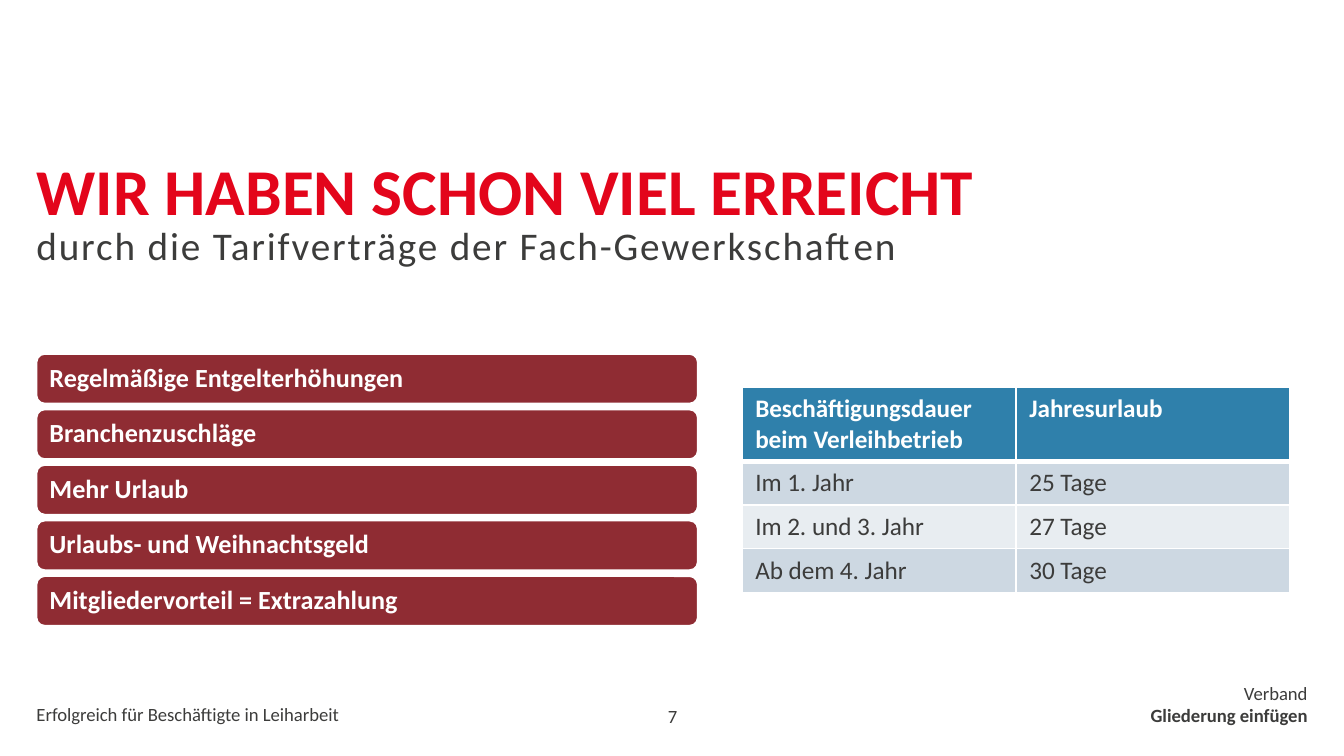
from lxml import etree
from pptx import Presentation
from pptx import util as u
from pptx.dml import color
from pptx.enum import shapes, text
from pptx.oxml import ns

DARK, RED, WINE, WHITE = "3C3C3B", "E3051B", "8F2C33", "FFFFFF"
BLUE, BAND, PALE = "2F80AB", "CDD8E2", "E8EDF1"
LEFT = 0.69
ACHIEVEMENTS = [
    "Regelmäßige Entgelterhöhungen",
    "Branchenzuschläge",
    "Mehr Urlaub",
    "Urlaubs- und Weihnachtsgeld",
    "Mitgliedervorteil = Extrazahlung",
]
HOLIDAYS = [
    ("Beschäftigungsdauer beim Verleihbetrieb", "Jahresurlaub"),
    ("Im 1. Jahr", "25 Tage"),
    ("Im 2. und 3. Jahr", "27 Tage"),
    ("Ab dem 4. Jahr", "30 Tage"),
]


def rgb(value):
    """Turn a hex string into a colour."""
    return color.RGBColor.from_string(value)


def apply(target, values):
    """Set every attribute named in a dict of format values."""
    for name, value in values.items():
        setattr(target, name, value)


def write(paragraph, words, size, hue=DARK, bold=False, tracking=None, **layout):
    """Put one formatted run into a paragraph."""
    apply(paragraph, layout)
    run = paragraph.add_run()
    run.text = words
    apply(run.font, {"name": "Calibri", "size": u.Pt(size), "bold": bold})
    run.font.color.rgb = rgb(hue)
    if tracking:
        run.font._element.set("spc", str(tracking * 100))


def set_frame(frame, inset=0, anchor=text.MSO_ANCHOR.TOP):
    """Set wrapping, anchor and equal insets of a text frame."""
    sides = ("left", "top", "right", "bottom")
    margins = {f"margin_{side}": u.Cm(inset) for side in sides}
    apply(frame, {"word_wrap": True, "vertical_anchor": anchor, **margins})
    return frame


def add_text(slide, box, anchor=text.MSO_ANCHOR.TOP):
    """Add an empty text box and return its frame."""
    return set_frame(slide.shapes.add_textbox(*map(u.Cm, box)).text_frame, 0, anchor)


def add_bar(slide, top, words):
    """Add one rounded achievement bar."""
    bar = slide.shapes.add_shape(
        shapes.MSO_SHAPE.ROUNDED_RECTANGLE, *map(u.Cm, (LEFT, top, 12.5, 0.94))
    )
    bar.shadow.inherit = False
    bar.fill.solid()
    bar.fill.fore_color.rgb = rgb(WINE)
    bar.line.color.rgb = rgb(WHITE)
    bar.line.width = u.Pt(1)
    frame = set_frame(bar.text_frame, 0.2, text.MSO_ANCHOR.MIDDLE)
    write(frame.paragraphs[0], words, 14, WHITE, True,
          alignment=text.PP_ALIGN.LEFT, line_spacing=0.9)


def add_borders(cell, top, bottom):
    """Draw white borders of the given widths around a cell."""
    properties = cell._tc.get_or_add_tcPr()
    widths = {"lnL": 1, "lnR": 1, "lnT": top, "lnB": bottom}
    for place, (tag, width) in enumerate(widths.items()):
        border = etree.Element(ns.qn(f"a:{tag}"), w=str(u.Pt(width)))
        fill = etree.SubElement(border, ns.qn("a:solidFill"))
        etree.SubElement(fill, ns.qn("a:srgbClr"), val=WHITE)
        properties.insert(place, border)


def add_holiday_table(slide):
    """Add the table of yearly holidays by length of employment."""
    box = map(u.Cm, (14.02, 7.32, 10.36, 3.86))
    table = slide.shapes.add_table(len(HOLIDAYS), 2, *box).table
    for row, entries in enumerate(HOLIDAYS):
        header = row == 0
        table.rows[row].height = u.Cm(1.4 if header else 0.82)
        for column, words in enumerate(entries):
            cell = table.cell(row, column)
            cell.fill.solid()
            cell.fill.fore_color.rgb = rgb(BLUE if header else BAND if row % 2 else PALE)
            add_borders(cell, 3 if row == 1 else 1, 3 if header else 1)
            write(cell.text_frame.paragraphs[0], words, 13.5,
                  WHITE if header else DARK, header)


def add_footer(slide):
    """Add the topic, the page number and the sender."""
    bottom = text.MSO_ANCHOR.BOTTOM
    topic = add_text(slide, (LEFT, 13.28, 9.88, 0.43), bottom)
    write(topic.paragraphs[0], "Erfolgreich für Beschäftigte in Leiharbeit", 10)
    number = add_text(slide, (11.48, 13, 2.46, 0.76), bottom)
    write(number.paragraphs[0], "7", 10, alignment=text.PP_ALIGN.CENTER, line_spacing=0.9)
    sender = add_text(slide, (17, 12.88, 7.71, 0.86))
    right = text.PP_ALIGN.RIGHT
    write(sender.paragraphs[0], "Verband", 10, alignment=right)
    write(sender.add_paragraph(), "Gliederung einfügen", 10, bold=True, alignment=right)


def main():
    """Build the slide and save it."""
    deck = Presentation()
    apply(deck, {"slide_width": u.Cm(25.4), "slide_height": u.Cm(14.29)})
    slide = deck.slides.add_slide(deck.slide_layouts[6])
    title = add_text(slide, (LEFT, 3, 24, 1.27))
    write(title.paragraphs[0], "WIR HABEN SCHON VIEL ERREICHT", 35, RED, True,
          line_spacing=0.9)
    subtitle = add_text(slide, (LEFT, 4.29, 24, 1.37))
    write(subtitle.paragraphs[0], "durch die Tarifverträge der Fach-Gewerkschaften", 21,
          tracking=1, line_spacing=0.9)
    for position, achievement in enumerate(ACHIEVEMENTS):
        add_bar(slide, 6.69 + 1.05 * position, achievement)
    add_holiday_table(slide)
    add_footer(slide)
    deck.save("out.pptx")


if __name__ == "__main__":
    main()
